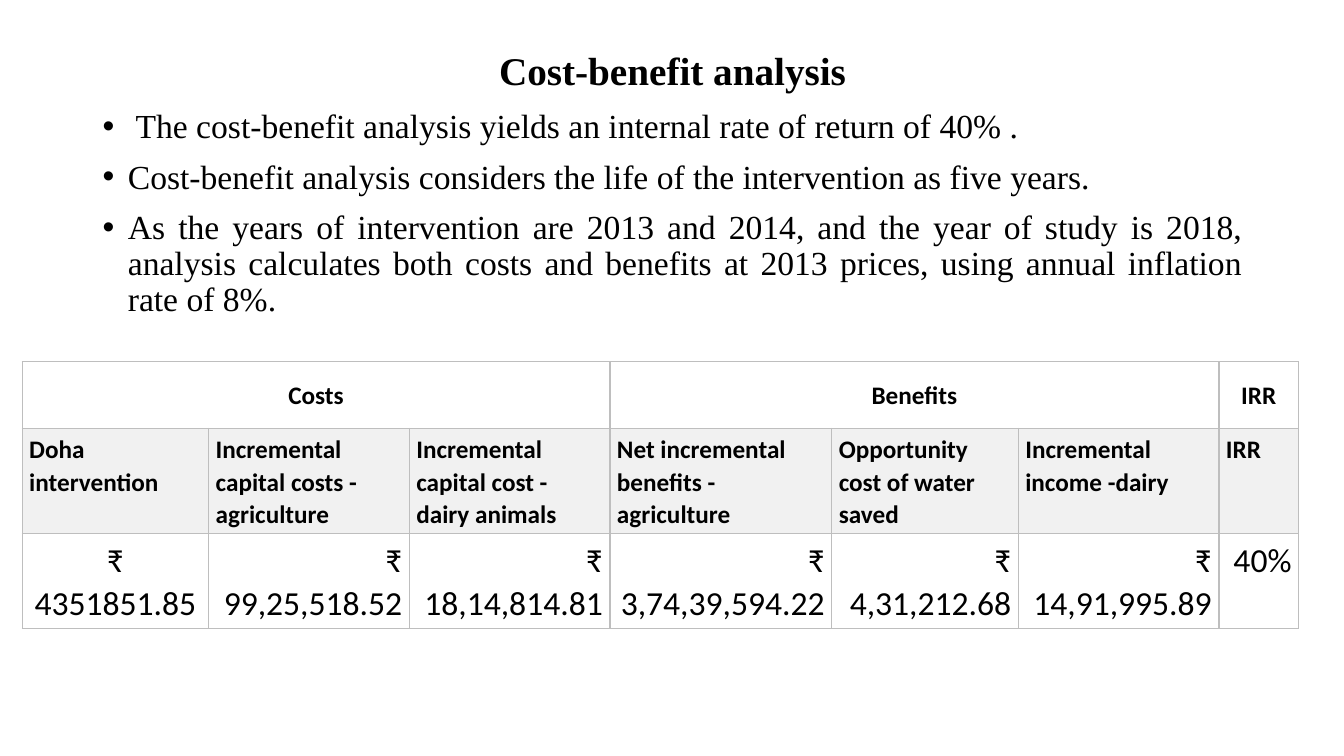
import pptx
import pptx.util
import pptx.dml.color
import pptx.enum.text
import pptx.oxml
import pptx.oxml.ns
from lxml import etree

Inches, Pt = pptx.util.Inches, pptx.util.Pt
ALIGN = pptx.enum.text.PP_ALIGN
ANCHOR = pptx.enum.text.MSO_ANCHOR
qn = pptx.oxml.ns.qn

# Content
TITLE = "Cost-benefit analysis"
POINTS = [
    " The cost-benefit analysis yields an internal rate of return of 40% .",
    "Cost-benefit analysis considers the life of the intervention as five years. ",
    "As the years of intervention are 2013 and 2014, and the year of study is 2018, "
    "analysis calculates both costs and benefits at 2013 prices, "
    "using annual inflation rate of 8%. ",
]
GROUPS = [("Costs", 3), ("Benefits", 3), ("IRR", 1)]
# heading, value, column width
COLS = [
    ("Doha intervention", "₹ 4351851.85", 1.85),
    ("Incremental capital costs - agriculture", "₹ 99,25,518.52", 1.99),
    ("Incremental capital cost - dairy animals", "₹ 18,14,814.81", 1.99),
    ("Net incremental benefits - agriculture", "₹ 3,74,39,594.22", 2.2),
    ("Opportunity cost of water saved", "₹ 4,31,212.68", 1.85),
    ("Incremental income -dairy", "₹ 14,91,995.89", 1.99),
    ("IRR", "40%", 0.79),
]
ROWS = [0.66, 0.79, 0.47]

THEME = {
    "serif": "Times New Roman", "sans": "Calibri",
    "ink": "000000", "paper": "FFFFFF", "band": "F1F1F1", "rule": "BEBEBE",
    "title": 28, "body": 24, "head": 18,
}


def color(name):
    return pptx.dml.color.RGBColor.from_string(THEME[name])


def write(para, text, font, size, align, space, bold=False):
    para.alignment = align
    para.line_spacing = space
    run = para.add_run()
    run.text = text
    run.font.name = THEME[font]
    run.font.size = Pt(THEME[size])
    run.font.bold = bold
    run.font.color.rgb = color("ink")


def add_box(slide, top, height, anchor):
    box = slide.shapes.add_textbox(Inches(0.92), Inches(top), Inches(11.5), Inches(height))
    frame = box.text_frame
    frame.word_wrap = True
    frame.vertical_anchor = anchor
    return frame


def add_bullet(para):
    props = para._p.get_or_add_pPr()
    props.set("marL", str(Inches(0.25)))
    props.set("indent", str(-Inches(0.25)))
    etree.SubElement(props, qn("a:buFont")).set("typeface", "Arial")
    etree.SubElement(props, qn("a:buChar")).set("char", "•")


def style(cell, fill):
    cell.margin_left = cell.margin_right = Inches(0.07)
    cell.margin_top = cell.margin_bottom = Inches(0.05)
    props = cell._tc.get_or_add_tcPr()
    for side in ("lnL", "lnR", "lnT", "lnB"):
        line = etree.SubElement(props, qn("a:" + side), w=str(Pt(1)))
        solid = etree.SubElement(line, qn("a:solidFill"))
        etree.SubElement(solid, qn("a:srgbClr"), val=THEME["rule"])
    cell.fill.solid()
    cell.fill.fore_color.rgb = color(fill)


def add_table(slide):
    widths = [Inches(col[2]) for col in COLS]
    heights = [Inches(row) for row in ROWS]
    grid = slide.shapes.add_table(len(ROWS), len(COLS), Inches(0.22), Inches(3.59),
                                  sum(widths), sum(heights)).table
    for row, height in zip(grid.rows, heights):
        row.height = height

    # Headings and values
    for c, (head, value, _) in enumerate(COLS):
        grid.columns[c].width = widths[c]
        for r, fill in enumerate(("paper", "band", "paper")):
            style(grid.cell(r, c), fill)
        write(grid.cell(1, c).text_frame.paragraphs[0], head,
              "sans", "head", ALIGN.LEFT, 1.05, True)
        side = ALIGN.RIGHT if c else ALIGN.CENTER
        write(grid.cell(2, c).text_frame.paragraphs[0], value, "sans", "body", side, 1.05)

    # Group headings across their columns
    start = 0
    for name, span in GROUPS:
        cell = grid.cell(0, start)
        if span > 1:
            cell.merge(grid.cell(0, start + span - 1))
        cell.vertical_anchor = ANCHOR.MIDDLE
        write(cell.text_frame.paragraphs[0], name, "sans", "head", ALIGN.CENTER, 1.05, True)
        start += span


def main():
    deck = pptx.Presentation()
    deck.slide_width, deck.slide_height = Inches(13.33), Inches(7.5)
    slide = deck.slides.add_slide(deck.slide_layouts[6])

    # Title
    frame = add_box(slide, 0.4, 0.64, ANCHOR.MIDDLE)
    write(frame.paragraphs[0], TITLE, "serif", "title", ALIGN.CENTER, 0.9, True)

    # Bullets
    frame = add_box(slide, 1.04, 5.72, ANCHOR.TOP)
    for i, text in enumerate(POINTS):
        para = frame.add_paragraph() if i else frame.paragraphs[0]
        write(para, text, "serif", "body", ALIGN.JUSTIFY, 0.9)
        para.space_before = Pt(10)
        add_bullet(para)

    add_table(slide)
    deck.save("out.pptx")


if __name__ == "__main__":
    main()
